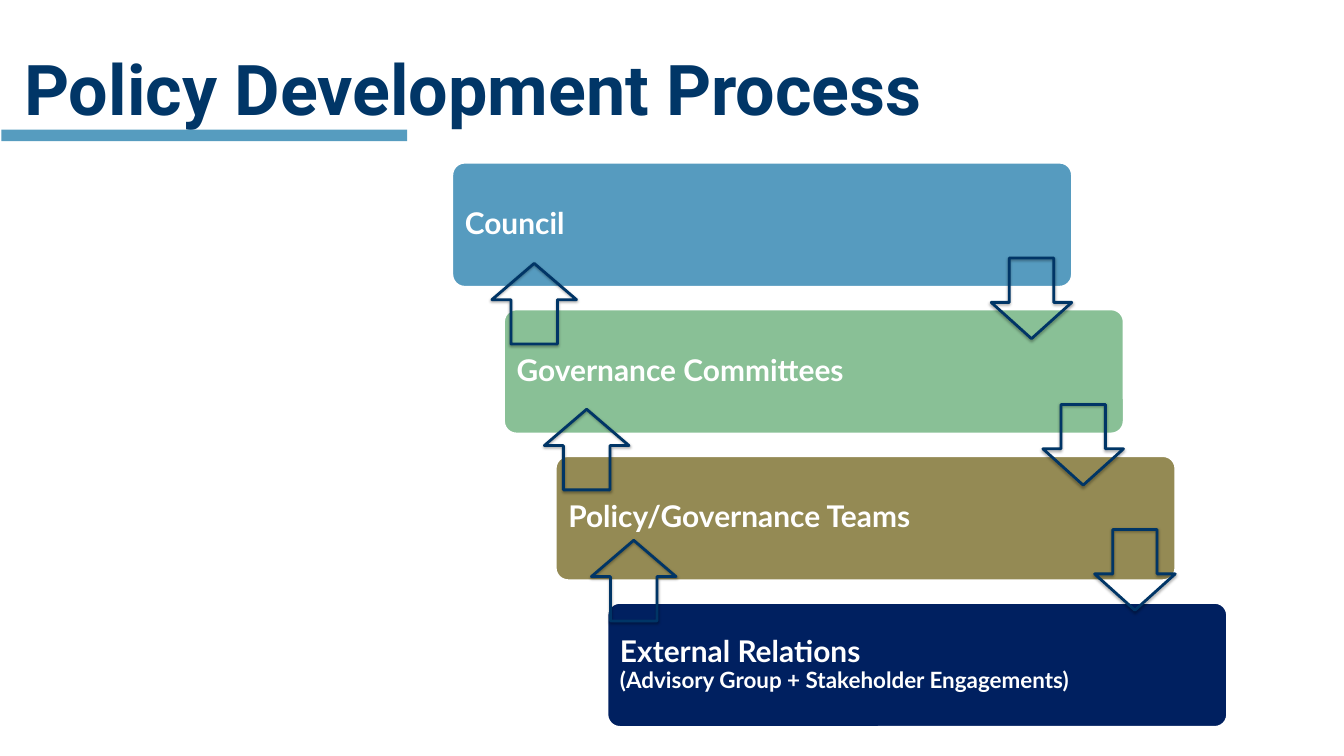
from dataclasses import dataclass

from lxml import etree
from pptx import Presentation
from pptx.dml.color import RGBColor
from pptx.enum import shapes, text
from pptx.oxml import ns
from pptx.util import Pt


@dataclass(frozen=True)
class Theme:
    title: str = "013667"
    rule: str = "569CBF"
    white: str = "FFFFFF"
    arrow: str = "003566"
    title_font: str = "Roboto"
    body_font: str = "Lato"
    title_size: float = 75
    label_size: float = 32
    note_size: float = 24


@dataclass(frozen=True)
class Level:
    label: str
    fill: str
    note: str = ""


@dataclass(frozen=True)
class Arrow:
    left: float
    top: float
    width: float
    rotation: float = 0


THEME = Theme()
LEVELS = [
    Level("Council", "569BBF"),
    Level("Governance Committees", "89C096"),
    Level("Policy/Governance Teams", "948A54"),
    Level("External Relations", "002060", "(Advisory Group + Stakeholder Engagements)"),
]
BAR_LEFT, BAR_TOP = 484.6, 174.3
BAR_WIDTH, BAR_HEIGHT = 664, 133
STEP_X, STEP_Y = 55.4, 157.2
ARROW_HEIGHT = 86.4
ARROWS = [Arrow(1062 + STEP_X * i, top, 86.4) for i, top in enumerate((276.5, 433.4, 567.4))]
ARROWS += [
    Arrow(left, top, 90.7, 180)
    for left, top in ((527, 282.2), (583.2, 438.5), (633.6, 578.9))
]


def rgb(value: str) -> RGBColor:
    return RGBColor.from_string(value)


def set_font(font, name: str, size: float, color: str) -> None:
    font.name, font.size, font.bold = name, Pt(size), True
    font.color.rgb = rgb(color)


def set_insets(tf, inset: float) -> None:
    tf.margin_left = tf.margin_right = tf.margin_top = tf.margin_bottom = Pt(inset)


def add_soft_shadow(sp) -> None:
    """Give the shape a faint shadow that falls straight down."""
    sp.shadow.inherit = False
    effects = sp._element.spPr.find(ns.qn("a:effectLst"))
    shadow = etree.SubElement(
        effects, ns.qn("a:outerShdw"), blurRad=str(Pt(3.1)), dist=str(Pt(1.8)),
        dir="5400000", rotWithShape="0",
    )
    color = etree.SubElement(shadow, ns.qn("a:srgbClr"), val="000000")
    etree.SubElement(color, ns.qn("a:alpha"), val="35000")


def add_title(s, title: str) -> None:
    sp = s.shapes.title
    sp.left, sp.top, sp.width, sp.height = Pt(26), Pt(31), Pt(1021), Pt(108.7)
    tf = sp.text_frame
    tf.text = title
    tf.vertical_anchor = text.MSO_ANCHOR.TOP
    tf.auto_size = text.MSO_AUTO_SIZE.NONE
    set_insets(tf, 0)
    p = tf.paragraphs[0]
    p.alignment = text.PP_ALIGN.LEFT
    p.line_spacing = 1.2
    set_font(p.font, THEME.title_font, THEME.title_size, THEME.title)


def add_rule(s) -> None:
    sp = s.shapes.add_shape(
        shapes.MSO_SHAPE.RECTANGLE, Pt(1.4), Pt(139), Pt(434.9), Pt(12.2)
    )
    sp.shadow.inherit = False
    sp.fill.solid()
    sp.fill.fore_color.rgb = rgb(THEME.rule)
    sp.line.fill.background()


def add_level(s, level: Level, index: int) -> None:
    sp = s.shapes.add_shape(
        shapes.MSO_SHAPE.ROUNDED_RECTANGLE,
        Pt(BAR_LEFT + STEP_X * index), Pt(BAR_TOP + STEP_Y * index),
        Pt(BAR_WIDTH), Pt(BAR_HEIGHT),
    )
    sp.adjustments[0] = 0.1
    sp.shadow.inherit = False
    sp.fill.solid()
    sp.fill.fore_color.rgb = rgb(level.fill)
    sp.line.color.rgb = rgb(THEME.white)
    sp.line.width = Pt(2)
    tf = sp.text_frame
    tf.word_wrap = True
    tf.vertical_anchor = text.MSO_ANCHOR.MIDDLE
    set_insets(tf, 9.6)
    p = tf.paragraphs[0]
    p.alignment = text.PP_ALIGN.LEFT
    p.line_spacing = 0.9
    set_font(p.font, THEME.body_font, THEME.label_size, THEME.white)
    p.add_run().text = level.label
    if level.note:
        p.add_line_break()
        r = p.add_run()
        r.text = level.note
        r.font.size = Pt(THEME.note_size)


def add_arrow(s, arrow: Arrow) -> None:
    sp = s.shapes.add_shape(
        shapes.MSO_SHAPE.DOWN_ARROW,
        Pt(arrow.left), Pt(arrow.top), Pt(arrow.width), Pt(ARROW_HEIGHT),
    )
    sp.adjustments[0], sp.adjustments[1] = 0.55, 0.45
    sp.rotation = arrow.rotation
    sp.fill.background()
    sp.line.color.rgb = rgb(THEME.arrow)
    sp.line.width = Pt(3)
    add_soft_shadow(sp)


def main() -> None:
    prs = Presentation()
    prs.slide_width, prs.slide_height = Pt(1440), Pt(810)
    s = prs.slides.add_slide(prs.slide_layouts.get_by_name("Title Only"))
    add_rule(s)
    add_title(s, "Policy Development Process")
    for index, level in enumerate(LEVELS):
        add_level(s, level, index)
    for arrow in ARROWS:
        add_arrow(s, arrow)
    prs.save("out.pptx")


if __name__ == "__main__":
    main()
